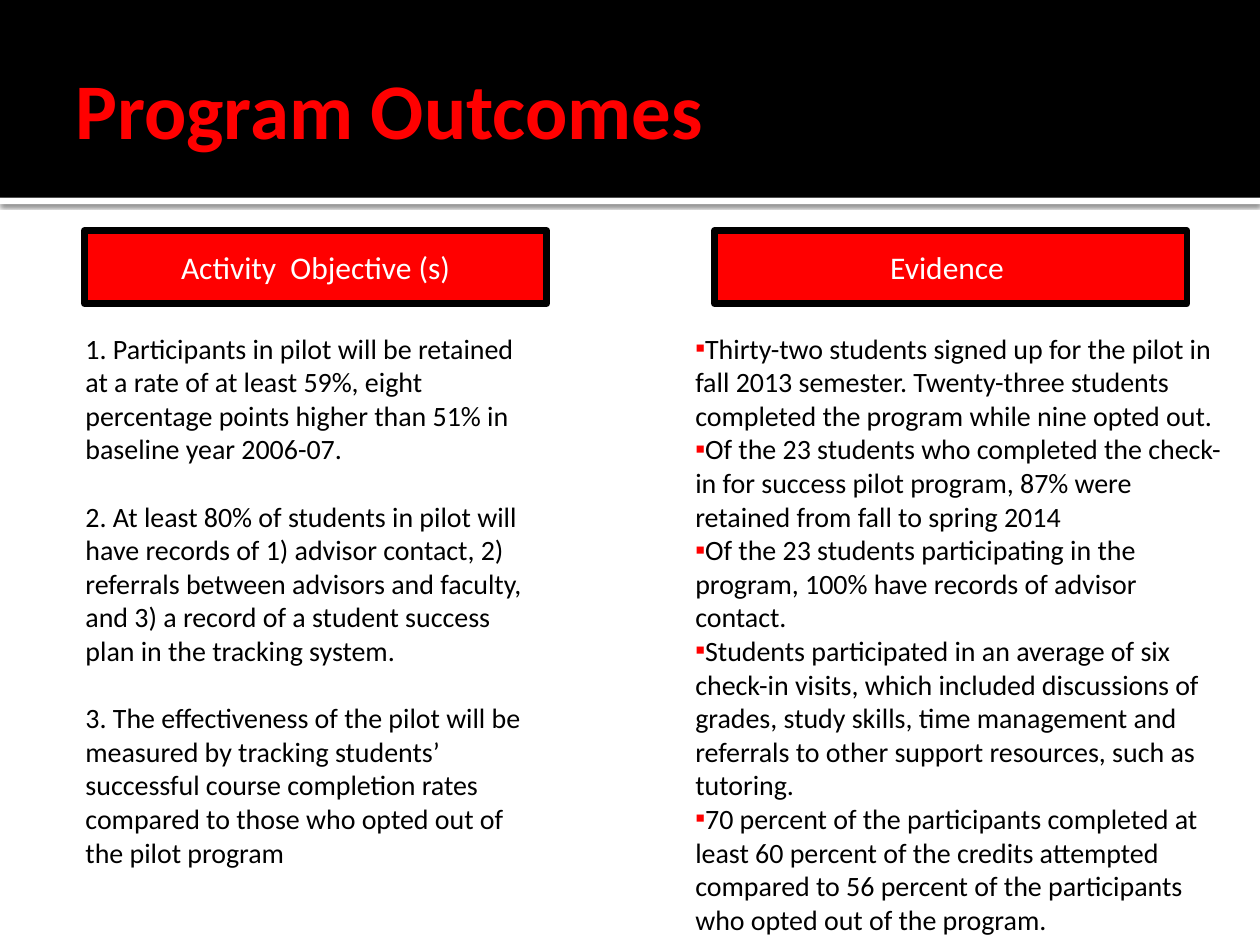
from lxml.etree import SubElement
from pptx import Presentation
from pptx.dml.color import RGBColor
from pptx.enum.shapes import MSO_SHAPE
from pptx.enum.text import MSO_ANCHOR, PP_ALIGN
from pptx.oxml import parse_xml
from pptx.oxml.ns import nsdecls, qn
from pptx.util import Inches, Pt

THEME = {
    "font": "Calibri",
    "red": RGBColor(255, 0, 0),
    "black": RGBColor(0, 0, 0),
    "white": RGBColor(255, 255, 255),
    "title": Pt(45),
    "heading": Pt(18),
    "body": Pt(16),
    "border": Pt(3.78),
}

OBJECTIVES = [
    "1. Participants in pilot will be retained at a rate of at least 59%, eight "
    "percentage points higher than 51% in baseline year 2006-07.",
    "2. At least 80% of students in pilot will have records of 1) advisor contact, "
    "2) referrals between advisors and faculty, and 3) a record of a student "
    "success plan in the tracking system.",
    "3. The effectiveness of the pilot will be measured by tracking students’ "
    "successful course completion rates compared to those who opted out of the "
    "pilot program",
]
EVIDENCE = [
    "Thirty-two students signed up for the pilot in fall 2013 semester. "
    "Twenty-three students completed the program while nine opted out.",
    "Of the 23 students who completed the check-in for success pilot program, "
    "87% were retained from fall to spring 2014",
    "Of the 23 students participating in the program, 100% have records of "
    "advisor contact.",
    "Students participated in an average of six check-in visits, which included "
    "discussions of grades, study skills, time management and referrals to other "
    "support resources, such as tutoring.",
    "70 percent of the participants completed at least 60 percent of the credits "
    "attempted compared to 56 percent of the participants who opted out of the "
    "program.",
]

presentation = Presentation()
presentation.slide_width = Inches(10)
presentation.slide_height = Inches(7.5)
slide = presentation.slides.add_slide(presentation.slide_layouts[6])


def add_rectangle(left, top, width, height, fill):
    shape = slide.shapes.add_shape(
        MSO_SHAPE.RECTANGLE, Inches(left), Inches(top), Inches(width), Inches(height)
    )
    shape.shadow.inherit = False
    shape.fill.solid()
    shape.fill.fore_color.rgb = THEME[fill]
    shape.line.fill.background()
    return shape


def write_paragraph(paragraph, text, size, color, bold=False):
    run = paragraph.add_run()
    run.text = text
    run.font.color.rgb = THEME[color]
    font_format = {"name": THEME["font"], "size": THEME[size], "bold": bold}
    for name, value in font_format.items():
        setattr(run.font, name, value)


# Header band with a white, shadowed rule below it
rule = add_rectangle(0, 1.57, 10, 0.05, "white")
effects = rule._element.spPr.find(qn("a:effectLst"))
effects.append(parse_xml(
    f'<a:outerShdw {nsdecls("a")} blurRad="{Pt(2.5)}" dist="{Pt(0.8)}" dir="5400000">'
    '<a:srgbClr val="000000"><a:alpha val="60000"/></a:srgbClr></a:outerShdw>'
))
add_rectangle(0, 0, 10, 1.57, "black")

title = slide.shapes.add_textbox(Inches(0.5), Inches(0.17), Inches(9), Inches(1.37))
title_format = {
    "word_wrap": True,
    "vertical_anchor": MSO_ANCHOR.MIDDLE,
    "margin_right": Inches(0.05),
}
for name, value in title_format.items():
    setattr(title.text_frame, name, value)
write_paragraph(title.text_frame.paragraphs[0], "Program Outcomes", "title", "red", True)

# Column headings
for left, width, heading in [(0.67, 3.67, "Activity  Objective (s)"), (5.67, 3.75, "Evidence ")]:
    box = add_rectangle(left, 1.83, width, 0.58, "red")
    box.line.color.rgb = THEME["black"]
    box.line.width = THEME["border"]
    box.text_frame.vertical_anchor = MSO_ANCHOR.MIDDLE
    paragraph = box.text_frame.paragraphs[0]
    paragraph.alignment = PP_ALIGN.CENTER
    write_paragraph(paragraph, heading, "heading", "white")

# Column texts: left, width, height, paragraphs, gap after each, bullet
columns = [
    (0.58, 3.75, 4.41, OBJECTIVES, Pt(19.2), None),
    (5.42, 4.42, 5.22, EVIDENCE, Pt(0), "▪"),
]
for left, width, height, texts, gap, bullet in columns:
    box = slide.shapes.add_textbox(Inches(left), Inches(2.58), Inches(width), Inches(height))
    frame = box.text_frame
    frame.word_wrap = True
    for index, text in enumerate(texts):
        paragraph = frame.add_paragraph() if index else frame.paragraphs[0]
        paragraph.space_after = gap
        write_paragraph(paragraph, text, "body", "black")
        if bullet:
            properties = paragraph._p.get_or_add_pPr()
            bullet_color = SubElement(properties, qn("a:buClr"))
            SubElement(bullet_color, qn("a:srgbClr"), val=str(THEME["red"]))
            SubElement(properties, qn("a:buFont"), typeface=THEME["font"])
            SubElement(properties, qn("a:buChar"), char=bullet)

presentation.save("out.pptx")
